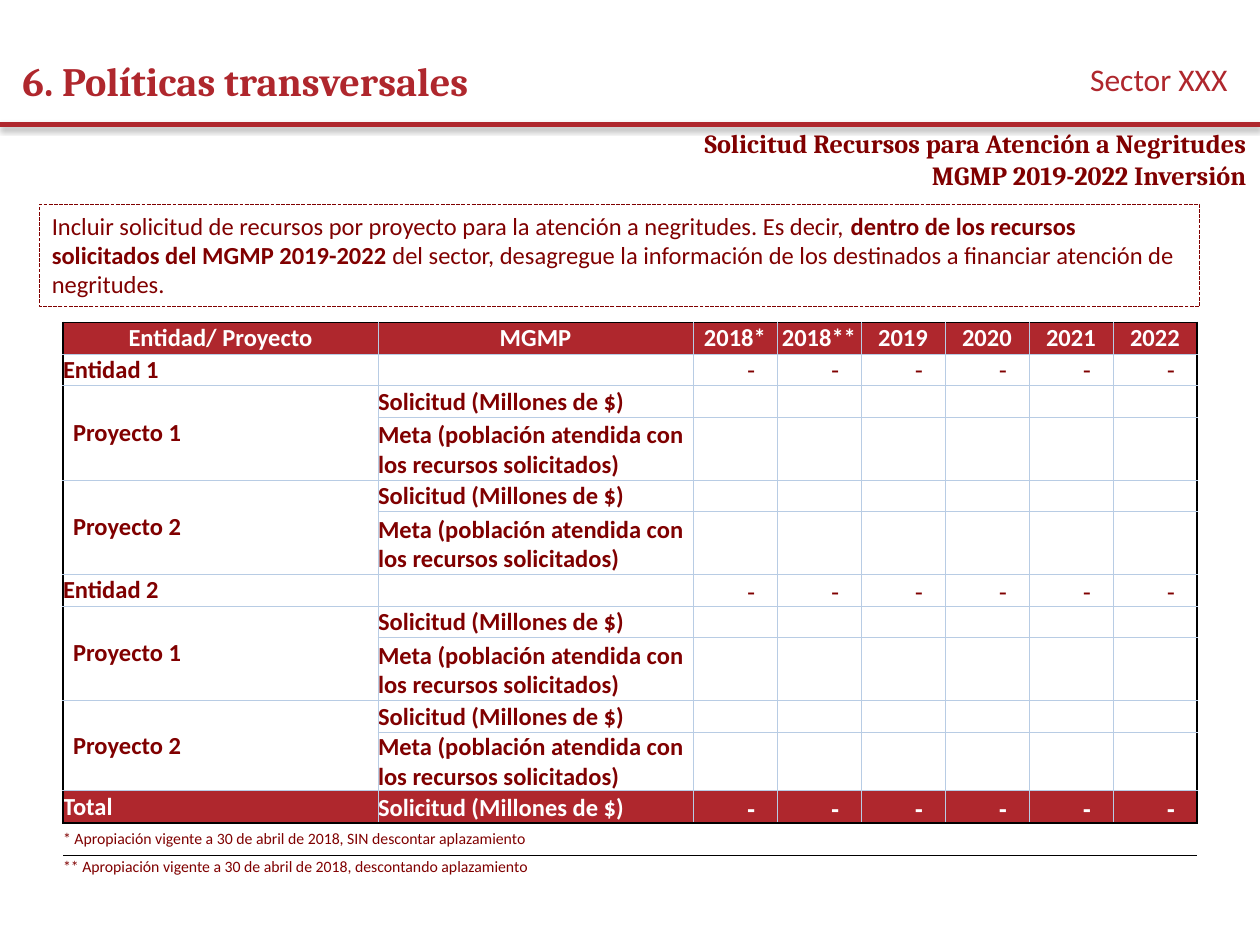
"""Build the slide on resource requests for cross-cutting policies."""
from dataclasses import dataclass
from typing import Any, Optional

from lxml.etree import SubElement
from pptx import Presentation
from pptx.dml.color import RGBColor
from pptx.enum.dml import MSO_LINE_DASH_STYLE as Dash
from pptx.enum.shapes import MSO_CONNECTOR_TYPE as Connector, MSO_SHAPE as Preset
from pptx.enum.text import MSO_ANCHOR as Anchor, PP_ALIGN as Align
from pptx.oxml.ns import qn
from pptx.util import Pt

RED = RGBColor(0xAF, 0x27, 0x2D)
MAROON = RGBColor(0x80, 0x00, 0x00)
WHITE = RGBColor(0xFF, 0xFF, 0xFF)
BLACK = RGBColor(0x00, 0x00, 0x00)
PALE_BLUE = RGBColor(0xB8, 0xCC, 0xE4)

NO_STYLE = "{2D5ABB26-0587-4C30-8999-92F81FD0307C}"
COLUMN_WIDTHS = [180, 180] + [48] * 6
HEADINGS = ["Entidad/ Proyecto", "MGMP", "2018*", "2018**", "2019", "2020", "2021", "2022"]
REQUEST = "Solicitud (Millones de $)"
GOAL = "Meta (población atendida con los recursos solicitados)"


@dataclass
class Style:
    size: float
    name: str = "Calibri"
    color: RGBColor = MAROON
    bold: bool = False


@dataclass
class TextBlock:
    left: float
    top: float
    width: float
    height: float
    lines: list[str]
    style: Style
    align: Align
    anchor: Anchor


@dataclass
class TableRow:
    kind: str
    label: str = ""
    detail: str = ""
    height: float = 18
    dash_anchor: Anchor = Anchor.BOTTOM


def project(number: int, goal_height: float = 36) -> list[TableRow]:
    return [TableRow("project", f"Proyecto {number}", REQUEST),
            TableRow("goal", detail=GOAL, height=goal_height)]


ROWS = [
    TableRow("header"),
    TableRow("entity", "Entidad 1", dash_anchor=Anchor.MIDDLE),
    *project(1), *project(2),
    TableRow("entity", "Entidad 2"),
    *project(1), *project(2, 33),
    TableRow("total", "Total", REQUEST, 18.5),
    TableRow("note", "* Apropiación vigente a 30 de abril de 2018, SIN descontar aplazamiento",
             height=18.5),
    TableRow("note", "** Apropiación vigente a 30 de abril de 2018, descontando aplazamiento",
             height=13),
]
BODY_END = len(ROWS) - 3

TITLES = [
    TextBlock(100.8, 77, 618.5, 28,
              ["Solicitud Recursos para Atención a Negritudes", "MGMP 2019-2022 Inversión"],
              Style(15, "Cambria", MAROON, True), Align.RIGHT, Anchor.MIDDLE),
    TextBlock(5.75, 26, 597.5, 39.5, ["6. Políticas transversales"],
              Style(23, "Cambria", RED, True), Align.LEFT, Anchor.MIDDLE),
    TextBlock(499, 31, 209.5, 29, ["Sector XXX"],
              Style(18, color=RED), Align.RIGHT, Anchor.TOP),
]


def assign(target: Any, values: dict[str, Any]) -> None:
    for key, value in values.items():
        setattr(target, key, value)


def add_span(para: Any, text: str, style: Style) -> None:
    span = para.add_run()
    span.text = text
    assign(span.font, {"size": Pt(style.size), "name": style.name, "bold": style.bold})
    span.font.color.rgb = style.color


def add_title(page: Any, block: TextBlock) -> None:
    box = page.shapes.add_textbox(Pt(block.left), Pt(block.top), Pt(block.width), Pt(block.height))
    frame = box.text_frame
    assign(frame, {"word_wrap": True, "vertical_anchor": block.anchor})
    for index, line in enumerate(block.lines):
        para = frame.add_paragraph() if index else frame.paragraphs[0]
        para.alignment = block.align
        add_span(para, line, block.style)


def add_header_rule(page: Any) -> None:
    rule = page.shapes.add_connector(Connector.STRAIGHT, Pt(0), Pt(71.25), Pt(720), Pt(71.25))
    rule.line.color.rgb = RED
    rule.line.width = Pt(3)
    effects = SubElement(rule._element.spPr, qn("a:effectLst"))
    shadow = SubElement(effects, qn("a:outerShdw"), blurRad=str(Pt(3.1)), dist=str(Pt(1.8)),
                        dir="5400000", rotWithShape="0")
    black = SubElement(shadow, qn("a:srgbClr"), val=str(BLACK))
    SubElement(black, qn("a:alpha"), val="35000")


def add_instructions(page: Any) -> None:
    box = page.shapes.add_shape(Preset.RECTANGLE, Pt(22.5), Pt(116.75), Pt(663), Pt(58.25))
    box.shadow.inherit = False
    box.fill.background()
    box.line.color.rgb = MAROON
    assign(box.line, {"width": Pt(0.75), "dash_style": Dash.SQUARE_DOT})
    assign(box.text_frame, {"word_wrap": True, "vertical_anchor": Anchor.TOP})
    para = box.text_frame.paragraphs[0]
    para.alignment = Align.LEFT
    regular, strong = Style(14), Style(14, bold=True)
    add_span(para, "Incluir solicitud de recursos por proyecto para la atención a negritudes. "
                   "Es decir, ", regular)
    add_span(para, "dentro de los recursos solicitados del MGMP 2019-2022", strong)
    add_span(para, " del sector, desagregue la información de los destinados a financiar "
                   "atención de negritudes.", regular)


def add_borders(cell: Any, row: int, column: int) -> None:
    outer = {"L": column == 0, "R": column == len(COLUMN_WIDTHS) - 1,
             "T": row in (0, BODY_END + 1), "B": row == BODY_END}
    for side, is_outer in outer.items():
        if row > BODY_END and not (side == "T" and is_outer):
            continue
        width, color = (1, BLACK) if is_outer else (0.5, PALE_BLUE)
        line = SubElement(cell._tc.get_or_add_tcPr(), qn(f"a:ln{side}"), w=str(Pt(width)))
        SubElement(SubElement(line, qn("a:solidFill")), qn("a:srgbClr"), val=str(color))


def fill_cell(cell: Any, text: str, style: Style, align: Align, anchor: Anchor,
              left: float = 0, right: float = 0) -> None:
    assign(cell, {"margin_left": Pt(left), "margin_right": Pt(right), "margin_top": 0,
                  "margin_bottom": 0, "vertical_anchor": anchor})
    para = cell.text_frame.paragraphs[0]
    para.alignment = align
    if text:
        add_span(para, text, style)
    else:
        SubElement(para._p, qn("a:endParaRPr"), sz=str(int(style.size * 100)))


def write_cell(cell: Any, row: TableRow, column: int) -> None:
    banded = row.kind in ("header", "total")
    style = Style(9) if row.kind == "note" else Style(14, color=WHITE if banded else MAROON, bold=True)
    if row.kind == "header":
        fill_cell(cell, HEADINGS[column], style, Align.CENTER, Anchor.MIDDLE)
    elif column == 0:
        indent = 5.75 if row.kind == "project" else 0
        fill_cell(cell, row.label, style, Align.LEFT, Anchor.MIDDLE, left=indent)
    elif column == 1:
        fill_cell(cell, row.detail, style, Align.LEFT, Anchor.BOTTOM)
    elif row.kind in ("entity", "total"):
        assign(style, {"name": "Arial", "bold": banded})
        fill_cell(cell, "-", style, Align.RIGHT, row.dash_anchor, right=12.5)
    else:
        fill_cell(cell, "", style, Align.LEFT, Anchor.MIDDLE)


def add_request_table(page: Any) -> None:
    frame = page.shapes.add_table(len(ROWS), len(COLUMN_WIDTHS), Pt(36), Pt(184.25),
                                  Pt(sum(COLUMN_WIDTHS)), Pt(sum(row.height for row in ROWS)))
    table = frame.table
    assign(table, {"first_row": False, "horz_banding": False})
    table._tbl.tblPr.find(qn("a:tableStyleId")).text = NO_STYLE
    for column, width in enumerate(COLUMN_WIDTHS):
        table.columns[column].width = Pt(width)
    for index, row in enumerate(ROWS):
        table.rows[index].height = Pt(row.height)
        for column in range(len(COLUMN_WIDTHS)):
            cell = table.cell(index, column)
            write_cell(cell, row, column)
            add_borders(cell, index, column)
            if row.kind in ("header", "total"):
                cell.fill.solid()
                cell.fill.fore_color.rgb = RED
            else:
                cell.fill.background()
        merge_end: Optional[tuple[int, int]] = {"project": (index + 1, 0), "note": (index, 1)}.get(row.kind)
        if merge_end:
            table.cell(index, 0).merge(table.cell(*merge_end))


def main() -> None:
    deck = Presentation()
    assign(deck, {"slide_width": Pt(720), "slide_height": Pt(540)})
    page = deck.slides.add_slide(deck.slide_layouts[6])
    add_header_rule(page)
    for block in TITLES:
        add_title(page, block)
    add_instructions(page)
    add_request_table(page)
    deck.save("out.pptx")


if __name__ == "__main__":
    main()
